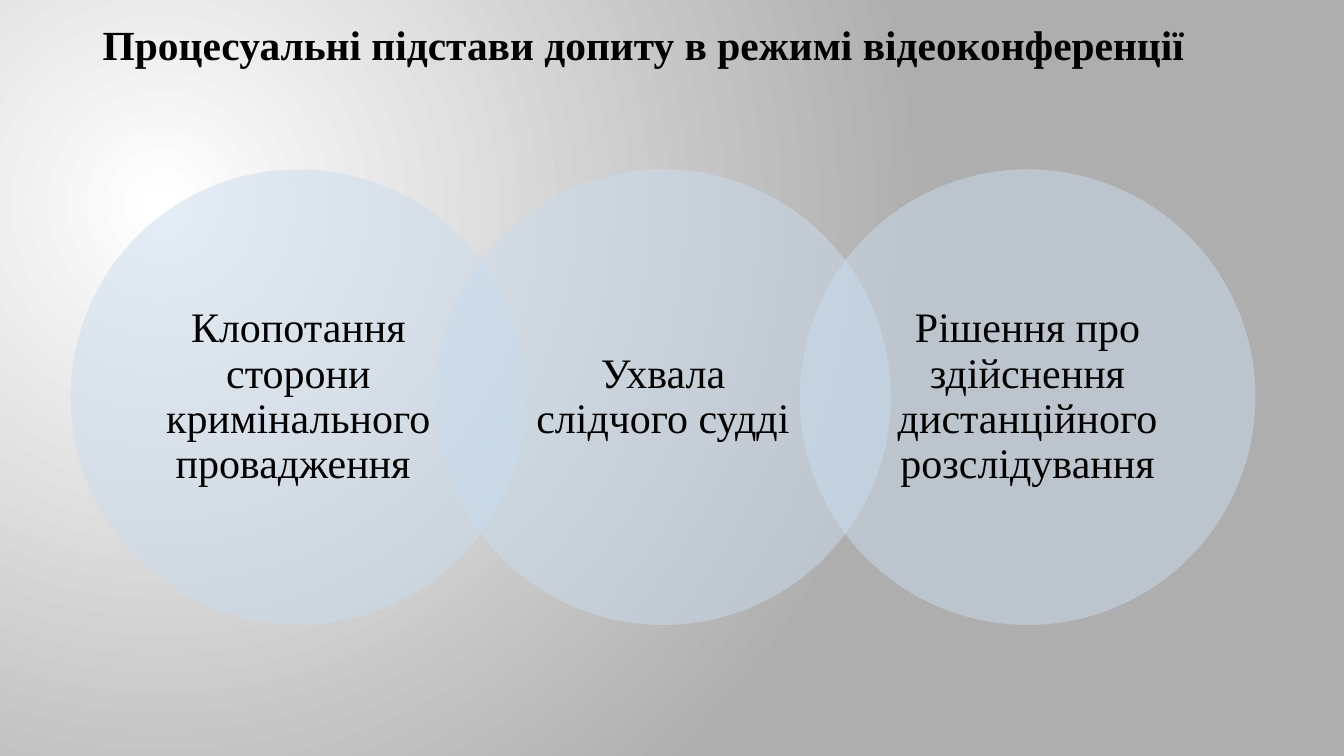
from lxml.etree import SubElement
from pptx import Presentation
from pptx.dml.color import RGBColor as Rgb
from pptx.enum.shapes import MSO_SHAPE as Shape
from pptx.enum.text import MSO_ANCHOR as Anchor, PP_ALIGN as Align
from pptx.oxml.ns import qn
from pptx.util import Inches, Pt

WIDE, HIGH = 13.33, 7.5
FONT = "Times New Roman"
INK = {"text": "000000", "disc": "CADCEE", "glow": "FFFFFF", "edge": "AEAEAE"}
TITLE = "Процесуальні підстави допиту в режимі відеоконференції"
GROUNDS = [
    "Клопотання сторони кримінального провадження ",
    "Ухвала слідчого судді",
    "Рішення про здійснення дистанційного розслідування",
]


def paint(slide):
    """Radial glow, centred in the upper left."""
    fill = slide.background.fill
    fill.gradient()
    for stop, key in zip(fill.gradient_stops, ("glow", "edge")):
        stop.color.rgb = Rgb.from_string(INK[key])
    first, last = fill.gradient_stops
    first.position, last.position = 0, 1
    grad = slide.background._cSld.find(".//" + qn("a:gradFill"))
    grad.remove(grad.find(qn("a:lin")))
    ring = SubElement(grad, qn("a:path"), path="circle")
    SubElement(ring, qn("a:fillToRect"),
               l="50000", t="55000", r="125000", b="100000")


def write(slide, box, text, size, bold=False):
    """Add a wrapped text box; return its frame and paragraph."""
    frame = slide.shapes.add_textbox(*map(Inches, box)).text_frame
    frame.word_wrap = True
    para = frame.paragraphs[0]
    run = para.add_run()
    run.text = text
    font = run.font
    font.name, font.size, font.bold = FONT, Pt(size), bold
    font.color.rgb = Rgb.from_string(INK["text"])
    return frame, para


def head(slide, box):
    """Title line."""
    _, para = write(slide, box, TITLE, 29.6, True)
    para.space_before = Pt(10)
    para.line_spacing = 0.83


def disc(slide, left, top, size, text):
    """Half-clear circle with a label in its inscribed square."""
    oval = slide.shapes.add_shape(
        Shape.OVAL, *map(Inches, (left, top, size, size)))
    oval.shadow.inherit = False
    oval.line.fill.background()
    oval.fill.solid()
    oval.fill.fore_color.rgb = Rgb.from_string(INK["disc"])
    tint = oval.fill._xPr.find(".//" + qn("a:srgbClr"))
    SubElement(tint, qn("a:alpha"), val="50000")

    side = size / 2 ** 0.5
    gap = (size - side) / 2
    frame, para = write(slide, (left + gap, top + gap, side, side), text, 30)
    frame.vertical_anchor = Anchor.MIDDLE
    frame.margin_left = frame.margin_right = Inches(0.25)
    frame.margin_top = frame.margin_bottom = Inches(0.04)
    para.alignment = Align.CENTER
    para.line_spacing = 0.9


def chain(slide, left, top, size):
    """Row of circles, each overlapping the next by a fifth."""
    for i, text in enumerate(GROUNDS):
        disc(slide, left + i * size * 0.8, top, size, text)


def main():
    deck = Presentation()
    deck.slide_width, deck.slide_height = Inches(WIDE), Inches(HIGH)
    slide = deck.slides.add_slide(deck.slide_layouts[6])
    paint(slide)
    head(slide, (0.92, 0.22, 11.32, 0.81))
    chain(slide, 0.7, 1.68, 4.52)
    deck.save("out.pptx")


if __name__ == "__main__":
    main()
